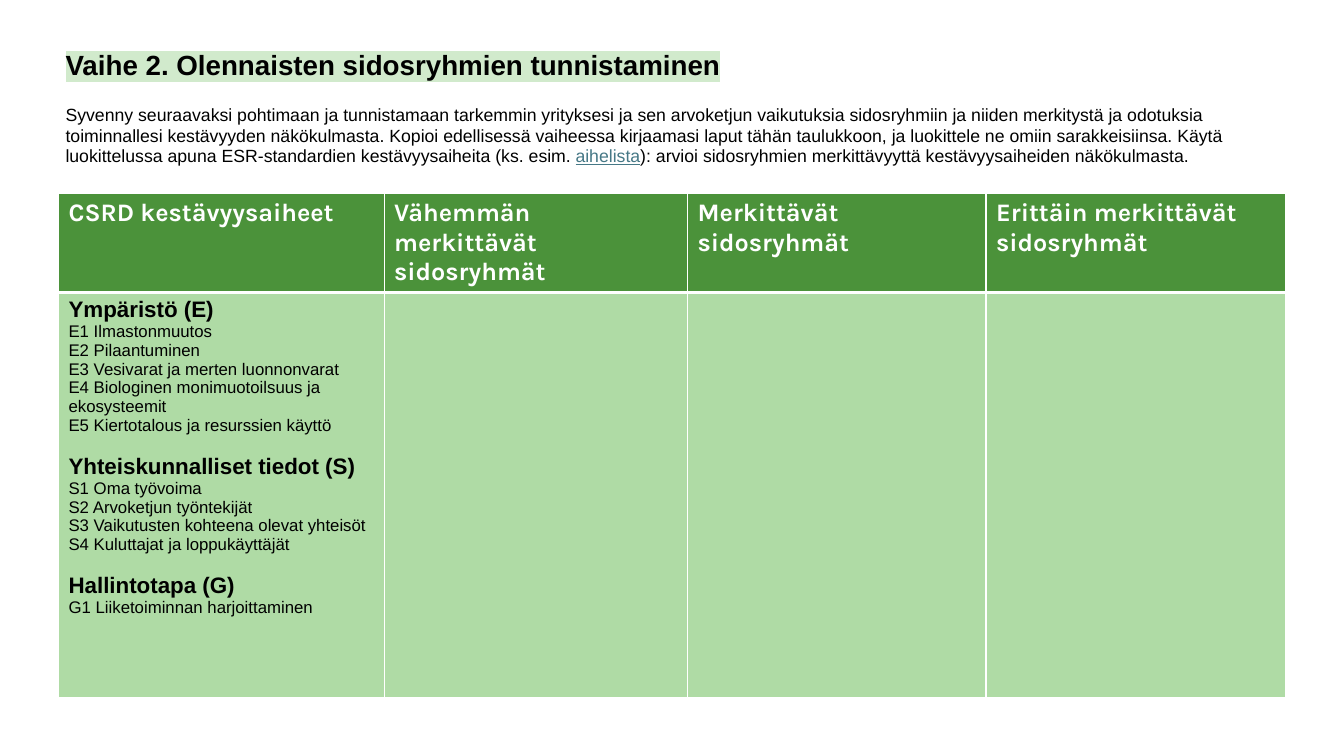
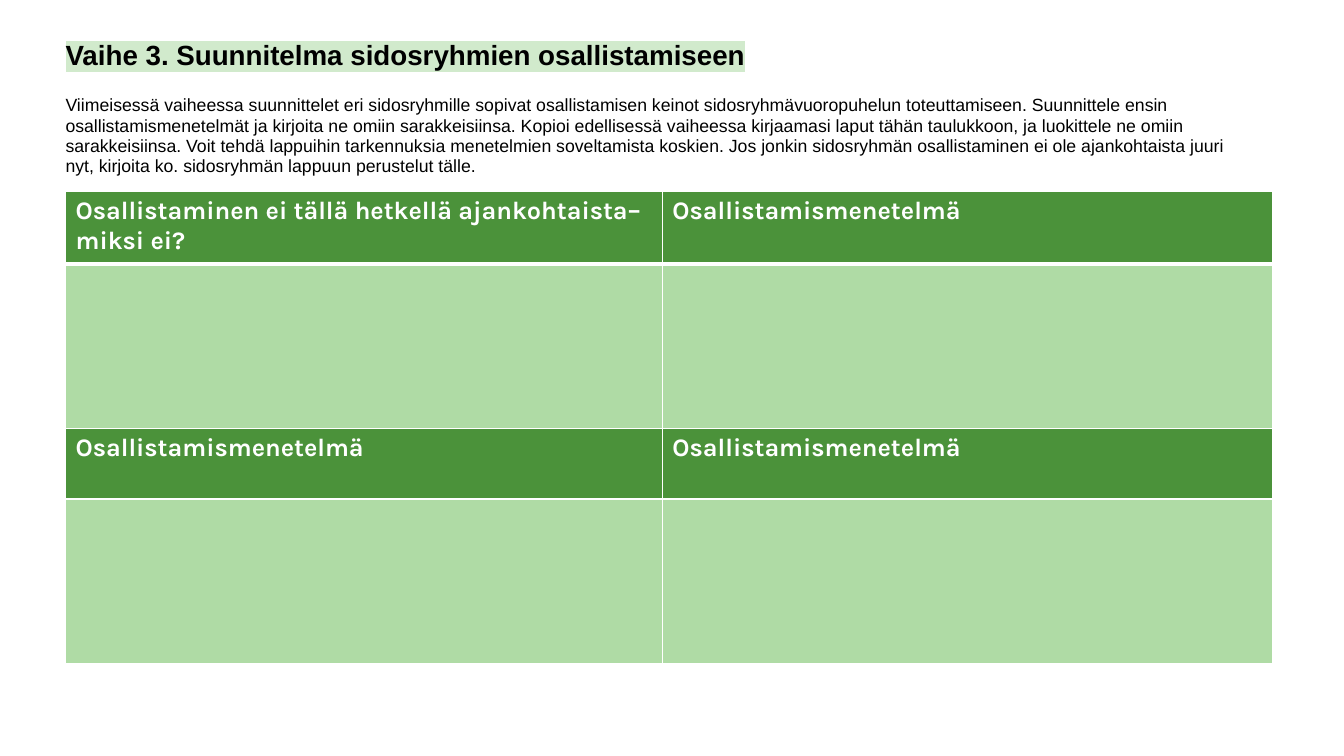
import pptx
import pptx.util
import pptx.dml.color
import pptx.enum.text
import pptx.oxml
import pptx.oxml.ns
from pptx.util import Inches

COLORS = {
    "text": "000000",
    "white": "FFFFFF",
    "highlight": "D1EACC",
    "header": "4B923A",
    "cell": "AFDBA5",
    "link": "467886",
}
BODY_FONT, HEADER_FONT = "Arial", "Karla"


def rgb(name):
    return pptx.dml.color.RGBColor.from_string(COLORS[name])


def add_run(p, text, size, color="text", font=BODY_FONT, bold=False, underline=False):
    r = p.add_run()
    r.text = text
    r.font.size = pptx.util.Pt(size)
    r.font.name = font
    r.font.bold = bold
    r.font.underline = underline
    r.font.color.rgb = rgb(color)
    return r


def highlight(r):
    mark = pptx.oxml.parse_xml(
        f'<a:highlight {pptx.oxml.ns.nsdecls("a")}>'
        f'<a:srgbClr val="{COLORS["highlight"]}"/></a:highlight>')
    r.font.fill._xPr.find(pptx.oxml.ns.qn("a:solidFill")).addnext(mark)


def style_cell(cell, fill, top=1, bottom=1):
    """White borders (widths in points) and a solid fill."""
    tcPr = cell._tc.get_or_add_tcPr()
    for side, width in (("L", 1), ("R", 1), ("T", top), ("B", bottom)):
        tcPr.append(pptx.oxml.parse_xml(
            f'<a:ln{side} {pptx.oxml.ns.nsdecls("a")} w="{pptx.util.Pt(width)}">'
            f'<a:solidFill><a:srgbClr val="{COLORS["white"]}"/></a:solidFill></a:ln{side}>'))
    cell.fill.solid()
    cell.fill.fore_color.rgb = rgb(fill)


def add_intro(s, box, heading, parts):
    """Highlighted heading with the instructions below it; parts are (text, is_link)."""
    sp = s.shapes.title
    sp.left, sp.top, sp.width, sp.height = (Inches(v) for v in box)
    tf = sp.text_frame
    tf.word_wrap = True
    tf.auto_size = pptx.enum.text.MSO_AUTO_SIZE.NONE
    tf.vertical_anchor = pptx.enum.text.MSO_ANCHOR.MIDDLE
    p = tf.paragraphs[0]
    highlight(add_run(p, heading, 19.8, bold=True))
    body = tf.add_paragraph()
    body.space_before = pptx.util.Pt(17)
    for text, is_link in parts:
        add_run(body, text, 12.6, "link" if is_link else "text", underline=is_link)
    for p in tf.paragraphs:
        p.alignment = pptx.enum.text.PP_ALIGN.LEFT
        p.line_spacing = 0.95


def add_grid(s, left, top, cols, rows, headers):
    """Table in which each row of headers is followed by a row of open cells."""
    table = s.shapes.add_table(len(rows), len(cols), Inches(left), Inches(top),
                               Inches(sum(cols)), Inches(sum(rows))).table
    for column, width in zip(table.columns, cols):
        column.width = Inches(width)
    for i, height in enumerate(rows):
        table.rows[i].height = Inches(height)
        is_header = i % 2 == 0
        for j in range(len(cols)):
            cell = table.cell(i, j)
            style_cell(cell, "header" if is_header else "cell",
                       top=3 if i == 1 else 1, bottom=3 if i == 0 else 1)
            if is_header:
                add_run(cell.text_frame.paragraphs[0], headers[i // 2][j], 18,
                        "white", HEADER_FONT, bold=True)
    return table


def add_topics(cell, groups):
    """Bold group names, each followed by its topics."""
    tf = cell.text_frame
    for i, (name, topics) in enumerate(groups):
        p = tf.add_paragraph() if i else tf.paragraphs[0]
        if i:
            p.space_before = pptx.util.Pt(13.5)
        add_run(p, name, 16, bold=True)
        for topic in topics:
            add_run(tf.add_paragraph(), topic, 12)


def stakeholder_slide(s):
    add_intro(s, (0.55, 0.35, 12.21, 1.45), "Vaihe 2. Olennaisten sidosryhmien tunnistaminen", [
        ("Syvenny seuraavaksi pohtimaan ja tunnistamaan tarkemmin yrityksesi ja sen arvoketjun "
         "vaikutuksia sidosryhmiin ja niiden merkitystä ja odotuksia toiminnallesi kestävyyden "
         "näkökulmasta. Kopioi edellisessä vaiheessa kirjaamasi laput tähän taulukkoon, ja "
         "luokittele ne omiin sarakkeisiinsa. Käytä luokittelussa apuna ESR-standardien "
         "kestävyysaiheita (ks. esim. ", False),
        ("aihelista", True),
        ("): arvioi sidosryhmien merkittävyyttä kestävyysaiheiden näkökulmasta.", False),
    ])
    table = add_grid(s, 0.58, 1.92, [3.23, 3.01, 2.96, 2.97], [0.97, 4.02], [
        ["CSRD kestävyysaiheet", "Vähemmän merkittävät sidosryhmät",
         "Merkittävät sidosryhmät", "Erittäin merkittävät sidosryhmät"],
    ])
    add_topics(table.cell(1, 0), [
        ("Ympäristö (E)", [
            "E1 Ilmastonmuutos", "E2 Pilaantuminen", "E3 Vesivarat ja merten luonnonvarat",
            "E4 Biologinen monimuotoilsuus ja ekosysteemit",
            "E5 Kiertotalous ja resurssien käyttö"]),
        ("Yhteiskunnalliset tiedot (S)", [
            "S1 Oma työvoima", "S2 Arvoketjun työntekijät",
            "S3 Vaikutusten kohteena olevat yhteisöt", "S4 Kuluttajat ja loppukäyttäjät"]),
        ("Hallintotapa (G)", ["G1 Liiketoiminnan harjoittaminen"]),
    ])


def engagement_slide(s):
    add_intro(s, (0.55, 0.35, 11.98, 1.45), "Vaihe 3. Suunnitelma sidosryhmien osallistamiseen", [
        ("Viimeisessä vaiheessa suunnittelet eri sidosryhmille sopivat osallistamisen keinot "
         "sidosryhmävuoropuhelun toteuttamiseen. Suunnittele ensin osallistamismenetelmät ja "
         "kirjoita ne omiin sarakkeisiinsa. Kopioi edellisessä vaiheessa kirjaamasi laput tähän "
         "taulukkoon, ja luokittele ne omiin sarakkeisiinsa. Voit tehdä lappuihin tarkennuksia "
         "menetelmien soveltamista koskien. Jos jonkin sidosryhmän osallistaminen ei ole "
         "ajankohtaista juuri nyt, kirjoita ko. sidosryhmän lappuun perustelut tälle.", False),
    ])
    method = "Osallistamismenetelmä"
    add_grid(s, 0.65, 1.9, [5.92, 6.05], [0.72, 1.63, 0.7, 1.63], [
        ["Osallistaminen ei tällä hetkellä ajankohtaista– miksi ei?", method],
        [method, method],
    ])


def main():
    prs = pptx.Presentation()
    prs.slide_width, prs.slide_height = Inches(13.33), Inches(7.5)
    title_only = prs.slide_layouts[5]
    for build in (stakeholder_slide, engagement_slide):
        build(prs.slides.add_slide(title_only))
    prs.save("out.pptx")


if __name__ == "__main__":
    main()
